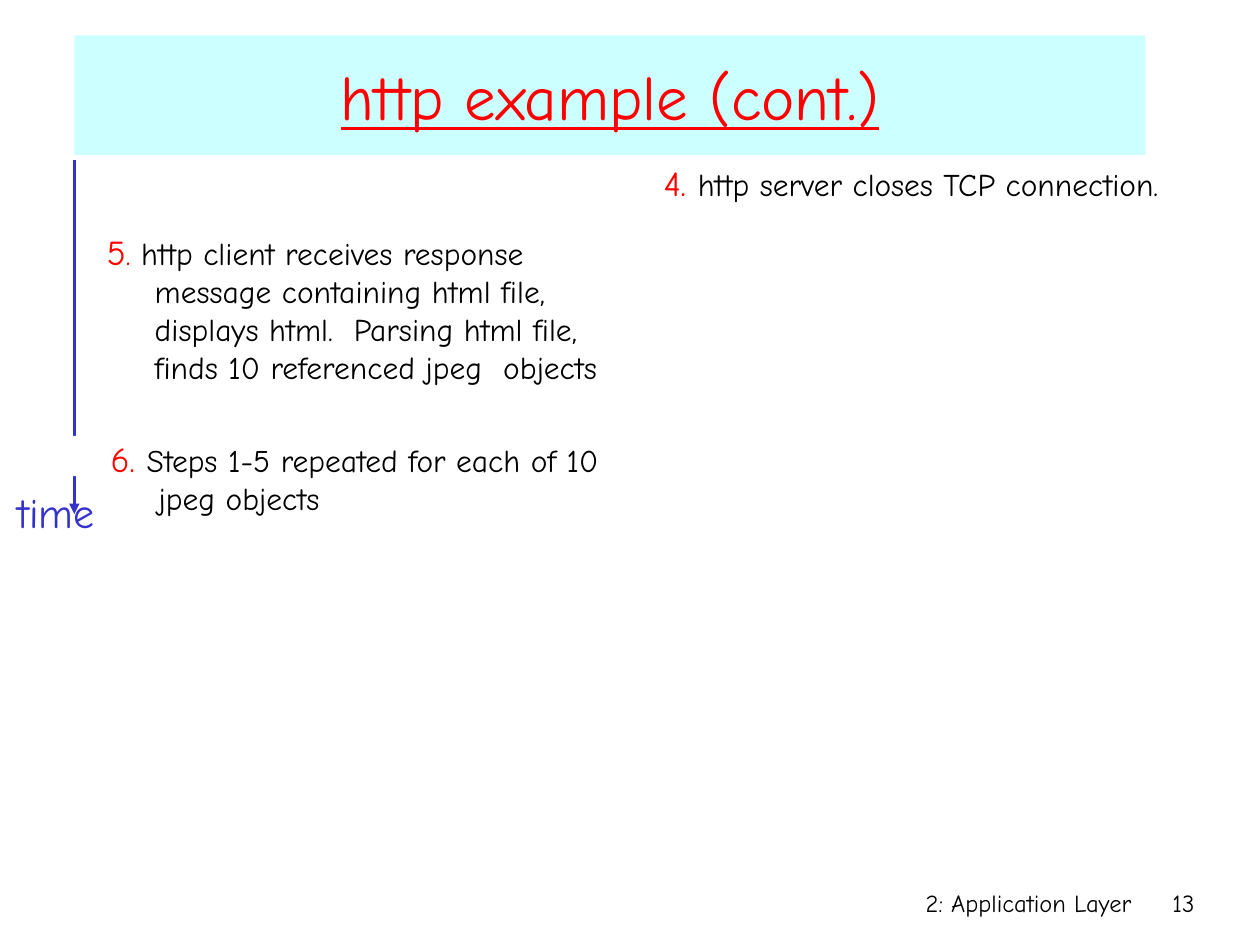
from lxml.etree import SubElement
from pptx import Presentation
from pptx.dml.color import RGBColor
from pptx.enum.shapes import MSO_CONNECTOR, MSO_SHAPE
from pptx.enum.text import MSO_ANCHOR, MSO_AUTO_SIZE, PP_ALIGN
from pptx.oxml.ns import qn
from pptx.util import Inches, Pt

FONT = "Comic Neue"
COLORS = {"ink": "000000", "red": "FF0000", "blue": "3333CC",
          "band": "CCFFFF", "white": "FFFFFF"}


def color(name):
    return RGBColor.from_string(COLORS[name])


def style(font, size, tone):
    font.name = FONT
    font.size = Pt(size)
    font.color.rgb = color(tone)


def add_text(slide, box, text, size, tone, align, wrap=True):
    frame = slide.shapes.add_textbox(*map(Inches, box)).text_frame
    frame.word_wrap = wrap
    para = frame.paragraphs[0]
    para.text = text
    para.alignment = align
    style(para.font, size, tone)


def add_title(slide, box, text):
    title = slide.shapes.title
    title.left, title.top, title.width, title.height = map(Inches, box)
    title.fill.solid()
    title.fill.fore_color.rgb = color("band")
    frame = title.text_frame
    frame.auto_size = MSO_AUTO_SIZE.NONE
    frame.vertical_anchor = MSO_ANCHOR.MIDDLE
    para = frame.paragraphs[0]
    para.text = text
    para.alignment = PP_ALIGN.CENTER
    para.font.underline = True
    style(para.font, 36, "red")


def add_step(slide, box, parts):
    frame = slide.shapes.add_textbox(*map(Inches, box)).text_frame
    frame.word_wrap = True
    para = frame.paragraphs[0]
    props = para._p.get_or_add_pPr()
    props.set("marL", str(Inches(0.38)))
    props.set("indent", str(-Inches(0.38)))
    space = SubElement(props, qn("a:spcBef"))
    SubElement(space, qn("a:spcPct"), val="20000")
    for text, size, tone in parts:
        run = para.add_run()
        run.text = text
        style(run.font, size, tone)


def add_axis(slide, box):
    left, top, width, height = box
    x = left + 0.59
    line = slide.shapes.add_connector(
        MSO_CONNECTOR.STRAIGHT, Inches(x), Inches(top),
        Inches(x), Inches(top + 2.81))
    line.line.color.rgb = color("blue")
    line.line.width = Pt(1.5)
    SubElement(line.line._get_or_add_ln(), qn("a:tailEnd"), type="triangle")
    SubElement(line._element.spPr, qn("a:effectLst"))
    gap = slide.shapes.add_shape(
        MSO_SHAPE.RECTANGLE, Inches(left + 0.33), Inches(top + 2.19),
        Inches(0.38), Inches(0.32))
    gap.shadow.inherit = False
    gap.fill.solid()
    gap.fill.fore_color.rgb = color("white")
    gap.line.fill.background()
    add_text(slide, (left, top + height - 0.5, width, 0.5), "time", 24,
             "blue", PP_ALIGN.CENTER, wrap=False)


def add_footer(slide, box):
    left, top, width, height = box
    page = 0.5
    add_text(slide, (left, top, width - page, height),
             "2: Application Layer", 14, "ink", PP_ALIGN.RIGHT)
    add_text(slide, (left + width - page, top, page, height),
             "13", 14, "ink", PP_ALIGN.RIGHT)


def main():
    deck = Presentation()
    deck.slide_width, deck.slide_height = Inches(10), Inches(7.5)
    slide = deck.slides.add_slide(deck.slide_layouts[5])
    add_footer(slide, (5.92, 7, 3.66, 0.5))
    add_title(slide, (0.59, 0.28, 8.5, 0.95), "http example (cont.)")
    steps = [
        ((0.75, 1.78, 4.17, 1.68),
         [("5", 20, "red"), (".", 18, "red"),
          (" http client receives response message containing html file, "
           "displays html.  Parsing html file, finds 10 referenced jpeg  "
           "objects", 18, "ink")]),
        ((0.78, 3.42, 4.17, 0.73),
         [("6. ", 20, "red"),
          ("Steps 1-5 repeated for each of 10 jpeg objects", 18, "ink")]),
        ((5.17, 1.23, 4.17, 0.8),
         [("4. ", 20, "red"),
          ("http server closes TCP connection.", 18, "ink")]),
    ]
    for box, parts in steps:
        add_step(slide, box, parts)
    add_axis(slide, (0, 1.27, 0.89, 3.04))
    deck.save("out.pptx")


if __name__ == "__main__":
    main()
